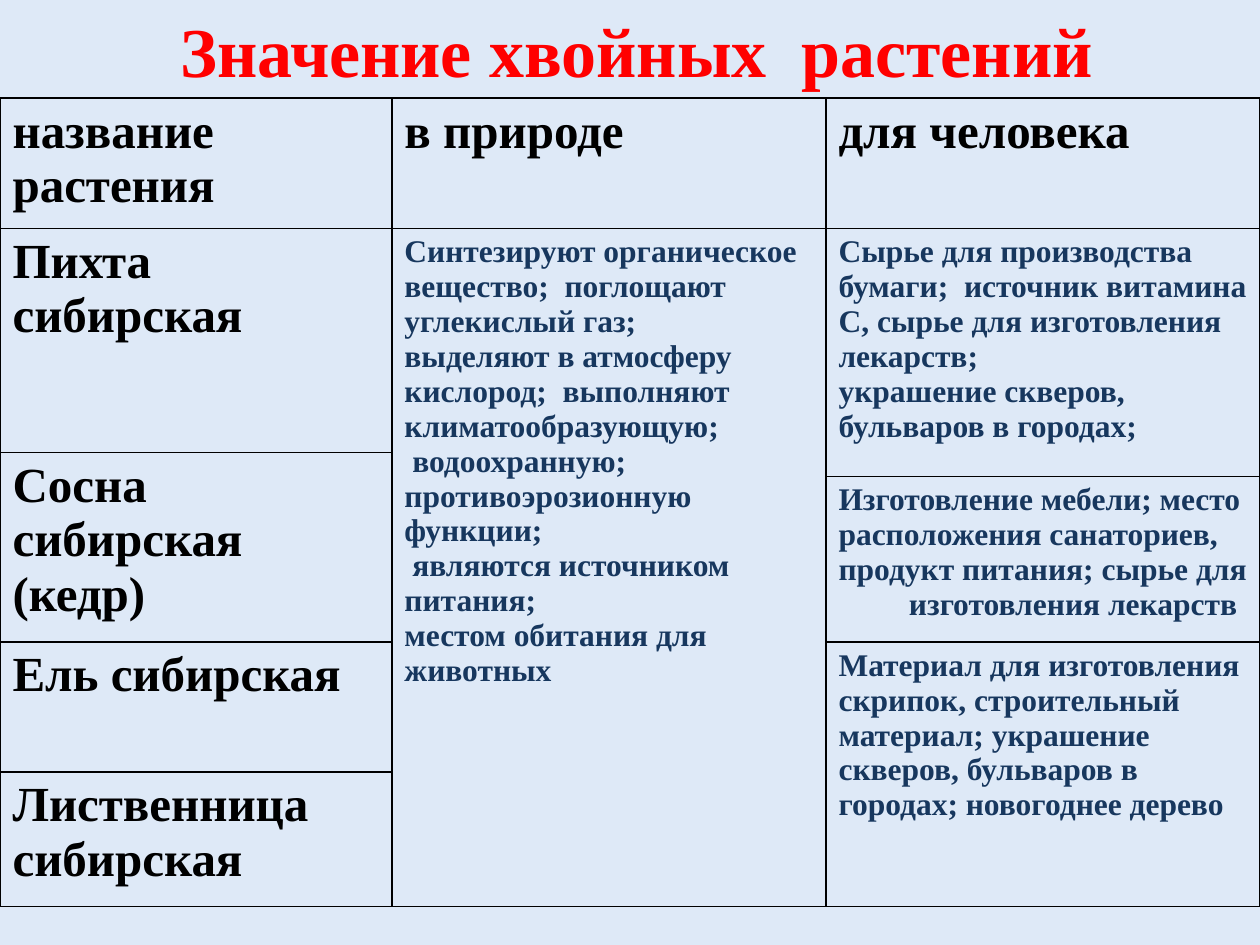
from lxml.etree import SubElement
from pptx import Presentation
from pptx.dml.color import RGBColor
from pptx.enum.text import MSO_ANCHOR as ANCHOR, PP_ALIGN as ALIGN
from pptx.oxml.ns import qn
from pptx.util import Cm, Pt

COLS = [7.9, 8.75, 8.75]
ROWS = [2.59, 4.52, 0.48, 3.3, 2.62, 2.72]
HEADING = dict(size=28, color="000000")
BODY = dict(size=18, color="17375E")

# row, column, rows spanned, format, paragraphs
CELLS = [
    (0, 0, 1, HEADING, ["название растения"]),
    (0, 1, 1, HEADING, ["в природе"]),
    (0, 2, 1, HEADING, ["для человека"]),
    (1, 0, 1, HEADING, ["Пихта сибирская"]),
    (2, 0, 2, HEADING, ["Сосна сибирская (кедр)"]),
    (4, 0, 1, HEADING, ["Ель сибирская"]),
    (5, 0, 1, HEADING, ["Лиственница сибирская"]),
    (1, 1, 5, BODY, [
        "Синтезируют органическое вещество;  поглощают углекислый газ;",
        "выделяют в атмосферу кислород;  выполняют климатообразующую;",
        " водоохранную;",
        "противоэрозионную функции;",
        " являются источником питания;",
        "местом обитания для животных",
    ]),
    (1, 2, 2, BODY, [
        "Сырье для производства бумаги;  источник витамина С, "
        "сырье для изготовления лекарств;",
        "украшение скверов, бульваров в городах;",
    ]),
    (3, 2, 1, BODY, [
        "Изготовление мебели; место расположения санаториев,",
        "продукт питания; сырье для изготовления лекарств",
    ]),
    (4, 2, 2, BODY, [
        "Материал для изготовления скрипок, строительный материал; "
        "украшение скверов, бульваров в городах; новогоднее дерево",
    ]),
]


def rgb(color):
    return RGBColor.from_string(color)


def add_run(p, text, size=18, color="000000", font="Times New Roman", bold=True):
    r = p.add_run()
    r.text = text
    r.font.name, r.font.size, r.font.bold = font, Pt(size), bold
    r.font.color.rgb = rgb(color)


def hang(p, indent):
    """Indent every line but the first."""
    pPr = p._p.get_or_add_pPr()
    pPr.set("marL", str(Cm(indent)))
    pPr.set("indent", str(-Cm(indent)))


def add_borders(cell, color="000000", width=1):
    tcPr = cell._tc.get_or_add_tcPr()
    for side in "LRTB":
        ln = SubElement(tcPr, qn(f"a:ln{side}"), w=str(Pt(width)))
        fill = SubElement(ln, qn("a:solidFill"))
        SubElement(fill, qn("a:srgbClr"), val=color)


class Deck:
    """Holds the presentation style and the current slide."""

    def __init__(self, background):
        self.prs = Presentation()
        self.prs.slide_width, self.prs.slide_height = Cm(25.4), Cm(19.05)
        self.s = self.prs.slides.add_slide(self.prs.slide_layouts[6])
        fill = self.s.background.fill
        fill.solid()
        fill.fore_color.rgb = rgb(background)

    def title(self, x, y, w, h, text):
        tf = self.s.shapes.add_textbox(Cm(x), Cm(y), Cm(w), Cm(h)).text_frame
        tf.word_wrap = True
        tf.vertical_anchor = ANCHOR.MIDDLE
        p = tf.paragraphs[0]
        p.alignment = ALIGN.CENTER
        add_run(p, " ", size=32, color="FF0000")
        add_run(p, text, size=40, color="FF0000")

    def table(self, x, y, cols, rows):
        frame = self.s.shapes.add_table(len(rows), len(cols), Cm(x), Cm(y),
                                        Cm(sum(cols)), Cm(sum(rows)))
        table = frame.table
        table.first_row = table.horz_banding = False
        for column, width in zip(table.columns, cols):
            column.width = Cm(width)
        for row, height in zip(table.rows, rows):
            row.height = Cm(height)
        for cell in table.iter_cells():
            add_borders(cell)
            cell.fill.background()
        return table

    def cell(self, table, row, col, span, style, texts):
        cell = table.cell(row, col)
        if span > 1:
            cell.merge(table.cell(row + span - 1, col))
        tf = cell.text_frame
        for i, text in enumerate(texts):
            p = tf.add_paragraph() if i else tf.paragraphs[0]
            add_run(p, text, **style)
        return cell


def main():
    deck = Deck("DEE9F7")
    deck.title(1.27, 0, 22.86, 1.98, "Значение хвойных  растений")
    table = deck.table(0, 1.98, COLS, ROWS)
    for entry in CELLS:
        deck.cell(table, *entry)
    hang(table.cell(3, 2).text_frame.paragraphs[1], 1.42)
    deck.prs.save("out.pptx")


if __name__ == "__main__":
    main()
